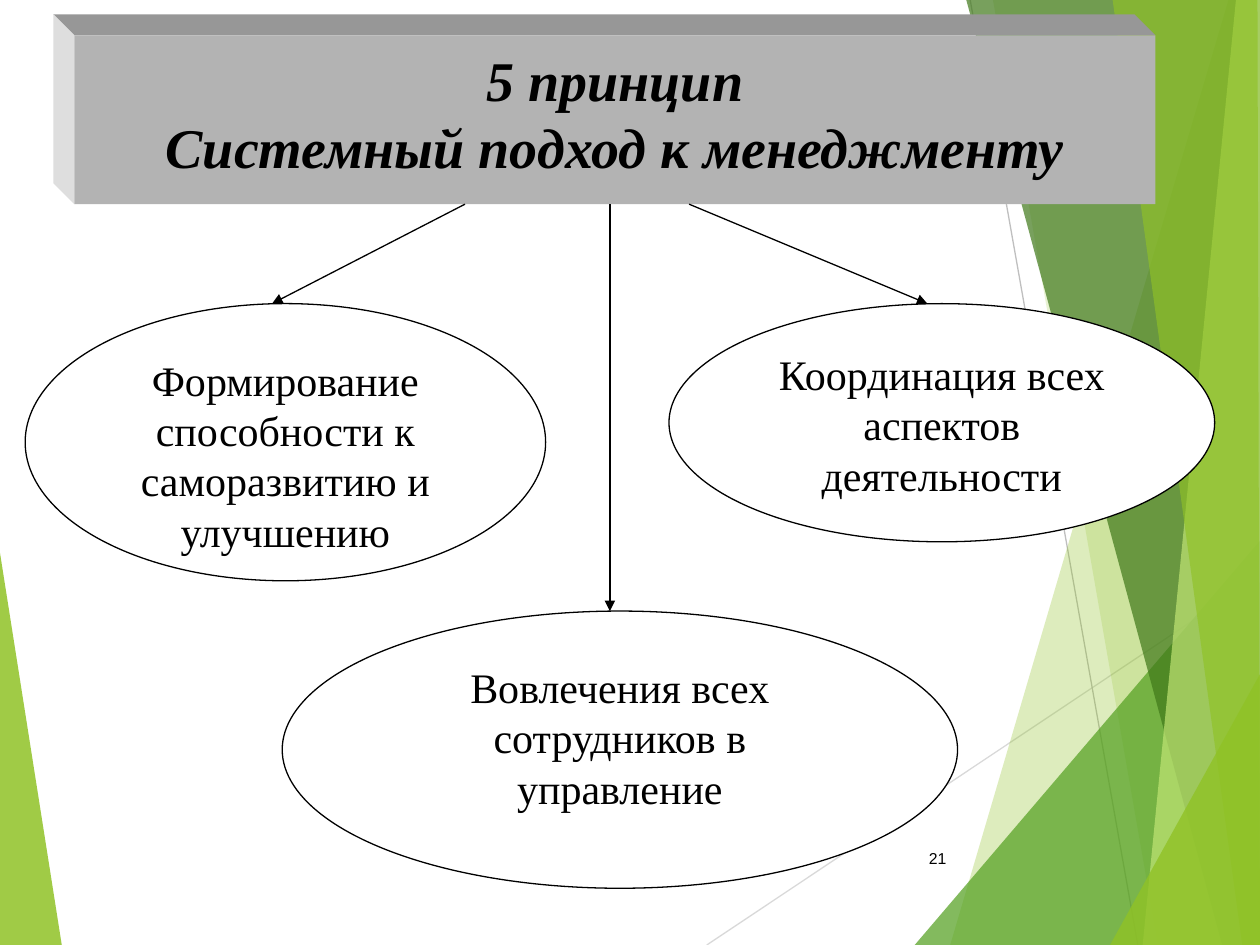
from pptx import Presentation
from pptx.dml.color import RGBColor
from pptx.enum.shapes import MSO_CONNECTOR, MSO_SHAPE
from pptx.enum.text import MSO_ANCHOR, PP_ALIGN
from pptx.oxml.ns import qn
from pptx.util import Pt
from lxml import etree

STRAIGHT = MSO_CONNECTOR.STRAIGHT
OVAL, RECTANGLE = MSO_SHAPE.OVAL, MSO_SHAPE.RECTANGLE
TOP, MIDDLE = MSO_ANCHOR.TOP, MSO_ANCHOR.MIDDLE
CENTER, RIGHT = PP_ALIGN.CENTER, PP_ALIGN.RIGHT

WIDTH, HEIGHT = 720, 540
SERIF, SANS = "Times New Roman", "Arial"
COLORS = {
    "lime": "90C226", "green": "54A021", "forest": "3F7819", "pale": "C0E474",
    "light_gray": "D9D9D9", "gray": "BFBFBF", "black": "000000", "white": "FFFFFF",
    "front": "B3B3B3", "top": "979797", "side": "DEDEDE",
}

# Decorative bands: corner points, colour, opacity in percent
LEFT_BAND = ([(0, 316), (35.3, HEIGHT), (0, HEIGHT)], "lime", 85)
RIGHT_BANDS = [
    ([(702, 0), (543, HEIGHT), (WIDTH, HEIGHT), (WIDTH, 0)], "lime", 30),
    ([(567.4, 0), (661.7, HEIGHT), (WIDTH, HEIGHT), (WIDTH, 0)], "lime", 20),
    ([(522.7, HEIGHT), (WIDTH, 309), (WIDTH, HEIGHT)], "green", 72),
    ([(552.2, 0), (698.4, HEIGHT), (WIDTH, HEIGHT), (WIDTH, 0)], "forest", 70),
    ([(706.3, 0), (653, HEIGHT), (WIDTH, HEIGHT), (WIDTH, 0)], "pale", 70),
    ([(635.8, 0), (709.9, HEIGHT), (WIDTH, HEIGHT), (718.6, 0)], "lime", 65),
    ([(634.3, HEIGHT), (WIDTH, 385.2), (WIDTH, HEIGHT)], "lime", 80),
]

TITLE_BOX = (42.5, 20.2, 617.8, 96.5)
DEPTH = 12
TITLE = ["5 принцип", "Системный подход к менеджменту"]
IDEAS = [
    ((14.4, 173.5, 297.4, 158.4), "Формирование способности к саморазвитию и улучшению"),
    ((382.3, 173.5, 311.8, 136.1), "Координация всех аспектов деятельности"),
    ((161.3, 349.2, 385.9, 158.4), "Вовлечения всех сотрудников в управление"),
]
ARROWS = [
    ((265.7, 116.7), (155.5, 173.5)),
    ((393.8, 116.7), (529.9, 173.5)),
    ((348.5, 116.7), (348.5, 349.2)),
]


def rgb(name):
    return RGBColor.from_string(COLORS[name])


def paint(shape, color, line=None):
    shape.shadow.inherit = False
    shape.fill.solid()
    shape.fill.fore_color.rgb = rgb(color)
    if line:
        shape.line.color.rgb = rgb(line)
        shape.line.width = Pt(0.75)
    else:
        shape.line.fill.background()


def add_polygon(page, points, color, opacity=100):
    corners = [(Pt(x), Pt(y)) for x, y in points]
    builder = page.shapes.build_freeform(*corners[0], scale=1.0)
    builder.add_line_segments(corners[1:], close=True)
    shape = builder.convert_to_shape()
    paint(shape, color)
    if opacity < 100:
        tint = shape._element.spPr.find(qn("a:solidFill"))[0]
        etree.SubElement(tint, qn("a:alpha"), val=str(opacity * 1000))


def add_line(page, start, end, color, arrow=False):
    line = page.shapes.add_connector(STRAIGHT, *(Pt(v) for v in start + end))
    line.line.color.rgb = rgb(color)
    line.line.width = Pt(0.75)
    if arrow:
        etree.SubElement(line.line._get_or_add_ln(), qn("a:tailEnd"), type="triangle")
    etree.SubElement(line._element.spPr, qn("a:effectLst"))


def write(shape, texts, size, font=SERIF, align=CENTER, anchor=TOP, slanted=False):
    frame = shape.text_frame
    frame.word_wrap = True
    frame.vertical_anchor = anchor
    for index, text in enumerate(texts):
        para = frame.paragraphs[0] if index == 0 else frame.add_paragraph()
        para.alignment = align
        para.line_spacing = Pt(size * 1.2)
        span = para.add_run()
        span.text = text
        span.font.name = font
        span.font.size = Pt(size)
        span.font.bold = span.font.italic = slanted
        span.font.color.rgb = rgb("black")


def add_box(page, kind, place, texts, size, fill, line=None, slanted=False):
    box = page.shapes.add_shape(kind, *(Pt(v) for v in place))
    paint(box, fill, line)
    write(box, texts, size, slanted=slanted)
    box.text_frame.margin_top = Pt(5.6)


def add_title(page):
    left, top, width, height = TITLE_BOX
    right, bottom = left + width, top + height
    back_left, back_top = left - DEPTH, top - DEPTH
    add_polygon(page, [(back_left, back_top), (right - DEPTH, back_top),
                       (right, top), (left, top)], "top")
    add_polygon(page, [(back_left, back_top), (left, top),
                       (left, bottom), (back_left, bottom - DEPTH)], "side")
    add_box(page, RECTANGLE, TITLE_BOX, TITLE, 32, "front", slanted=True)


def main():
    deck = Presentation()
    deck.slide_width, deck.slide_height = Pt(WIDTH), Pt(HEIGHT)
    page = deck.slides.add_slide(deck.slide_layouts[6])

    # Background decoration
    add_polygon(page, *LEFT_BAND)
    add_line(page, (403.9, HEIGHT), (WIDTH, 329), "light_gray")
    add_line(page, (554.4, 0), (650.2, HEIGHT), "gray")
    for band in RIGHT_BANDS:
        add_polygon(page, *band)

    # Page number
    number = page.shapes.add_textbox(Pt(507.6), Pt(475.9), Pt(40.3), Pt(28.8))
    write(number, ["21"], 9, SANS, RIGHT, MIDDLE)

    # Title block, ideas and arrows
    add_title(page)
    for place, text in IDEAS:
        add_box(page, OVAL, place, [text], 24, "white", "black")
    for start, end in ARROWS:
        add_line(page, start, end, "black", arrow=True)

    deck.save("out.pptx")


if __name__ == "__main__":
    main()
